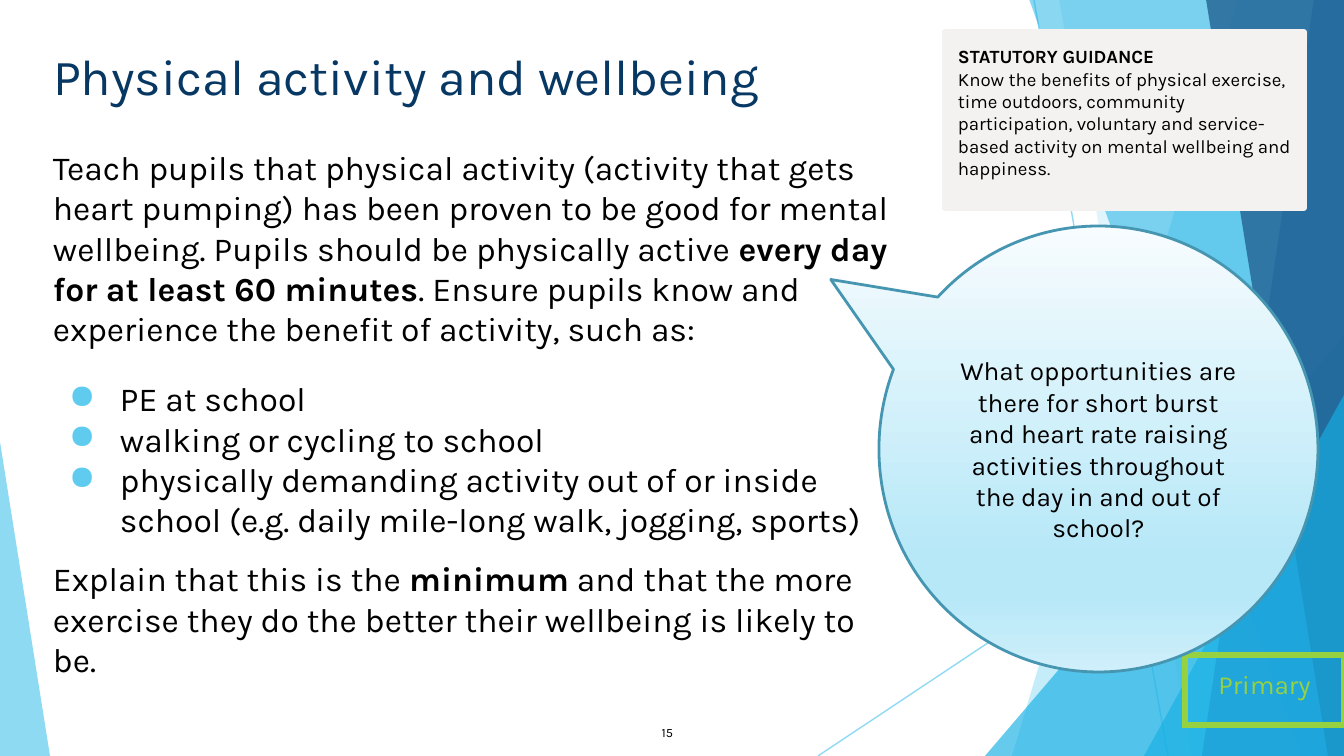
from lxml.etree import SubElement
from pptx import Presentation
from pptx.dml.color import RGBColor
from pptx.enum.shapes import MSO_CONNECTOR as Connector, MSO_SHAPE as Shape
from pptx.enum.text import MSO_ANCHOR as Anchor, PP_ALIGN as Align
from pptx.oxml.ns import qn
from pptx.util import Emu, Pt

EMU_PER_PX = 914400 / 134.4
WIDTH, HEIGHT = 1344, 756
FONT = "Karla"
COLORS = {
    "sky": "5FCBEF", "azure": "17B0E4", "blue": "2E83C3", "deep": "226292",
    "navy": "073763", "black": "000000", "grey": "F3F2F1", "green": "96D141",
    "teal": "4696B1",
}
BUBBLE_STOPS = [(0, "F7FCFE"), (74, "B7E8F8"), (83, "B7E8F8"), (100, "CFEFFA")]


def px(value):
    return Emu(round(value * EMU_PER_PX))


def rgb(name):
    return RGBColor.from_string(COLORS[name])


def set_opacity(shape, percent):
    for color in shape._element.spPr.iter(qn("a:srgbClr")):
        SubElement(color, qn("a:alpha"), val=str(percent * 1000))


def paint(shape, fill=None, line=None, line_width=1):
    shape.shadow.inherit = False
    if fill:
        shape.fill.solid()
        shape.fill.fore_color.rgb = rgb(fill)
    else:
        shape.fill.background()
    if line:
        shape.line.color.rgb = rgb(line)
        shape.line.width = Pt(line_width)
    else:
        shape.line.fill.background()


def add_ray(page, start, end):
    ray = page.shapes.add_connector(Connector.STRAIGHT, *map(px, start + end))
    ray.line.color.rgb = rgb("sky")
    ray.line.width = Pt(0.75)
    set_opacity(ray, 70)
    SubElement(ray._element.spPr, qn("a:effectLst"))


def add_band(page, top_x, bottom_x, color, opacity):
    """Full-height facet between a slanted left edge and the slide's right edge."""
    builder = page.shapes.build_freeform(top_x, -1, scale=EMU_PER_PX)
    builder.add_line_segments([(WIDTH, -1), (WIDTH, HEIGHT), (bottom_x, HEIGHT)])
    band = builder.convert_to_shape()
    paint(band, color)
    set_opacity(band, opacity)


def add_triangle(page, left, top, width, peak, color, opacity):
    """Triangle standing on the slide's bottom edge."""
    triangle = page.shapes.add_shape(
        Shape.ISOSCELES_TRIANGLE, *map(px, (left, top, width, HEIGHT - top)))
    triangle.adjustments[0] = peak
    paint(triangle, color)
    set_opacity(triangle, opacity)


def add_box(page, left, top, width, height, kind=None):
    place = [px(value) for value in (left, top, width, height)]
    box = page.shapes.add_shape(kind, *place) if kind else page.shapes.add_textbox(*place)
    frame = box.text_frame
    frame.word_wrap = True
    frame.vertical_anchor = Anchor.TOP
    frame.margin_left = frame.margin_right = px(13)
    frame.margin_top = frame.margin_bottom = px(13)
    return box


def add_span(para, text, size, color="black", bold=False):
    span = para.add_run()
    span.text = text
    span.font.name = FONT
    span.font.size = Pt(size)
    span.font.bold = bold
    span.font.color.rgb = rgb(color)


def next_para(box, align=Align.LEFT, before=0):
    frame = box.text_frame
    para = frame.paragraphs[0] if not frame.text else frame.add_paragraph()
    para.alignment = align
    para.space_before = Pt(before)
    return para


def add_bullet(para):
    props = para._p.get_or_add_pPr()
    props.set("marL", str(px(67)))
    props.set("indent", str(-px(51)))
    color = SubElement(props, qn("a:buClr"))
    SubElement(color, qn("a:srgbClr"), val=COLORS["sky"])
    SubElement(props, qn("a:buChar"), char="●")


def fill_gradient(shape, stops):
    shape.fill.gradient()
    shape.fill.gradient_angle = 270
    stop_list = next(shape._element.spPr.iter(qn("a:gsLst")))
    for old_stop in list(stop_list):
        stop_list.remove(old_stop)
    for position, color in stops:
        stop = SubElement(stop_list, qn("a:gs"), pos=str(position * 1000))
        SubElement(stop, qn("a:srgbClr"), val=color)


def draw_backdrop(page):
    add_ray(page, (1034, 0), (1168, HEIGHT))
    add_ray(page, (WIDTH, 406), (818, HEIGHT))
    add_band(page, 1238, 1012, "sky", 36)
    add_band(page, 1059, 1192, "sky", 20)
    add_triangle(page, 985, 336, 359, 1, "azure", 66)
    add_band(page, 1029, 1301, "azure", 50)
    add_band(page, 1314, 1202, "blue", 70)
    add_band(page, 1206, 1328, "deep", 80)
    add_triangle(page, 1144, 395, 200, 1, "azure", 66)
    add_triangle(page, 0, 442, 50, 0, "sky", 70)


def draw_body(page):
    body = add_box(page, 40, 134, 868, 554)
    intro = next_para(body)
    add_span(intro, "Teach pupils that physical activity (activity that gets heart pumping) "
             "has been proven to be good for mental wellbeing. "
             "Pupils should be physically active ", 18)
    add_span(intro, "every day for at least 60 minutes", 18, bold=True)
    add_span(intro, ". Ensure pupils know and experience the benefit of activity, such as:", 18)

    activities = [
        "PE at school",
        "walking or cycling to school",
        "physically demanding activity out of or inside school "
        "(e.g. daily mile-long walk, jogging, sports)",
    ]
    for index, activity in enumerate(activities):
        item = next_para(body, before=0 if index else 16)
        add_bullet(item)
        add_span(item, activity, 18)

    closing = next_para(body, before=10)
    add_span(closing, "Explain that this is the ", 18)
    add_span(closing, "minimum", 18, bold=True)
    add_span(closing, " and that the more exercise they do the better "
             "their wellbeing is likely to be.", 18)


def draw_guidance(page):
    guidance = add_box(page, 945, 32, 359, 176, Shape.RECTANGLE)
    paint(guidance, "grey", "grey", 3)
    para = next_para(guidance)
    para.space_after = Pt(16)
    add_span(para, "STATUTORY GUIDANCE", 10, bold=True)
    para.add_line_break()
    add_span(para, "Know the benefits of physical exercise, time outdoors, community "
             "participation, voluntary and service-based activity on mental wellbeing "
             "and happiness.", 10)


def draw_phase_tag(page):
    tag = add_box(page, 1185, 655, 159, 70, Shape.RECTANGLE)
    paint(tag, line="green", line_width=3)
    SubElement(tag._element.spPr.find(qn("a:ln")), qn("a:miter"), lim="800000")
    add_span(next_para(tag, Align.CENTER), "Primary", 14, "green")


def draw_bubble(page):
    bubble = add_box(page, 879, 226, 439, 446, Shape.OVAL_CALLOUT)
    bubble.adjustments[0] = -0.61
    bubble.adjustments[1] = -0.38
    paint(bubble, line="teal", line_width=1.5)
    fill_gradient(bubble, BUBBLE_STOPS)
    bubble.text_frame.vertical_anchor = Anchor.MIDDLE
    add_span(next_para(bubble, Align.CENTER),
             "What opportunities are there for short burst and heart rate raising "
             "activities throughout the day in and out of school?", 14)


def main():
    deck = Presentation()
    deck.slide_width, deck.slide_height = px(WIDTH), px(HEIGHT)
    page = deck.slides.add_slide(deck.slide_layouts[6])

    draw_backdrop(page)

    # Title
    title = add_box(page, 40, 32, 887, 85)
    add_span(next_para(title), "Physical activity and wellbeing", 27, "navy")

    draw_body(page)
    draw_guidance(page)

    # Page number
    number = add_box(page, 617, 707, 69, 50)
    number.text_frame.vertical_anchor = Anchor.MIDDLE
    add_span(next_para(number, Align.RIGHT), "15", 6.8)

    draw_phase_tag(page)
    draw_bubble(page)
    deck.save("out.pptx")


if __name__ == "__main__":
    main()
